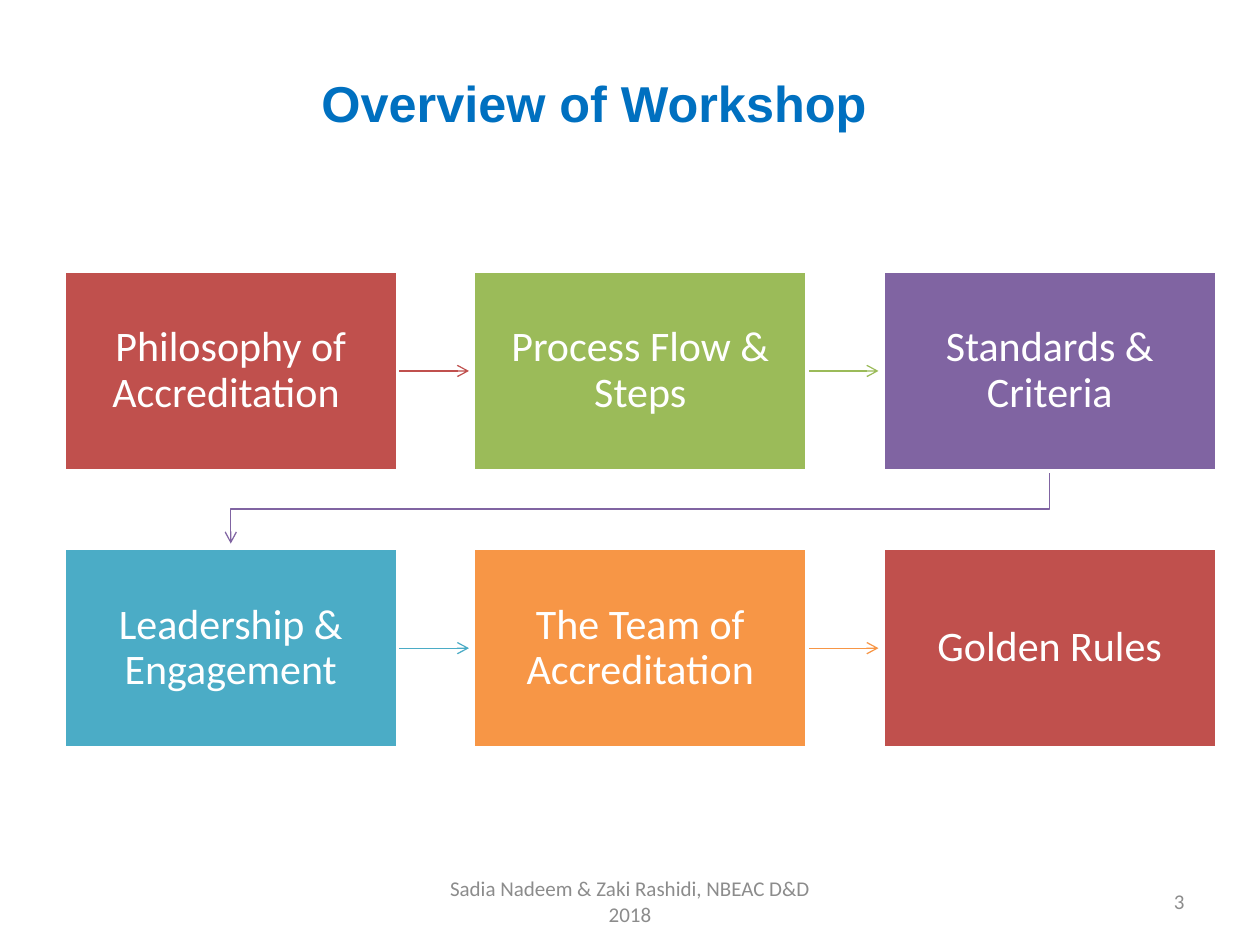
from lxml import etree
from pptx import Presentation
from pptx.dml.color import RGBColor
from pptx.enum import shapes, text
from pptx.oxml import ns
from pptx.util import Pt

WHITE = RGBColor(0xFF, 0xFF, 0xFF)
BLUE = RGBColor(0x00, 0x70, 0xC0)
GRAY = RGBColor(0x8C, 0x8C, 0x8C)
RED = RGBColor(0xC0, 0x50, 0x4D)
GREEN = RGBColor(0x9B, 0xBB, 0x59)
PURPLE = RGBColor(0x80, 0x64, 0xA2)
TEAL = RGBColor(0x4B, 0xAC, 0xC6)
ORANGE = RGBColor(0xF7, 0x96, 0x46)

STEPS = [
    ("Philosophy of Accreditation ", RED),
    ("Process Flow & Steps", GREEN),
    ("Standards & Criteria", PURPLE),
    ("Leadership & Engagement", TEAL),
    ("The Team of Accreditation", ORANGE),
    ("Golden Rules", RED),
]
COLUMNS = 3
LEFT, TOP = 36.6, 154.8
WIDTH, HEIGHT = 190.6, 114.4
PITCH_X, PITCH_Y = 234, 158.4
ARROW_GAP = 2.6
TURN_DROP = 21.7


class Page:
    font = "Calibri"
    step_size = 24
    small_size = 12
    inset = 13.7

    def __init__(self, deck):
        self.slide = deck.slides.add_slide(deck.slide_layouts[5])

    def set_words(self, shape, words, size, color, align, font=None, bold=False):
        frame = shape.text_frame
        frame.text = words
        frame.word_wrap = True
        frame.vertical_anchor = text.MSO_ANCHOR.MIDDLE
        para = frame.paragraphs[0]
        para.alignment = align
        for span in para.runs:
            span.font.name = font or self.font
            span.font.size = Pt(size)
            span.font.bold = bold
            span.font.color.rgb = color
        return frame

    def title(self, words, left, top, width, height):
        box = self.slide.shapes.title
        box.left, box.top, box.width, box.height = map(Pt, (left, top, width, height))
        self.set_words(box, words, 28.8, BLUE, text.PP_ALIGN.CENTER, "Arial", True)

    def label(self, words, left, top, width, height, align):
        box = self.slide.shapes.add_textbox(*map(Pt, (left, top, width, height)))
        self.set_words(box, words, self.small_size, GRAY, align)

    def step(self, words, color, left, top):
        box = self.slide.shapes.add_shape(
            shapes.MSO_SHAPE.RECTANGLE, *map(Pt, (left, top, WIDTH, HEIGHT)))
        box.shadow.inherit = False
        box.fill.solid()
        box.fill.fore_color.rgb = color
        box.line.color.rgb = WHITE
        box.line.width = Pt(2)
        frame = self.set_words(box, words, self.step_size, WHITE, text.PP_ALIGN.CENTER)
        frame.margin_left = frame.margin_right = Pt(self.inset)
        frame.margin_top = frame.margin_bottom = Pt(self.inset)
        frame.paragraphs[0].line_spacing = 0.9
        return box

    def arrow_style(self, arrow, color, box):
        arrow.line.color.rgb = color
        arrow.line.width = Pt(0.75)
        outline = arrow._element.spPr.find(ns.qn("a:ln"))
        etree.SubElement(outline, ns.qn("a:tailEnd"), type="arrow")
        box._element.addprevious(arrow._element)

    def arrow(self, box, color):
        start = box.left + box.width
        middle = box.top + box.height // 2
        end = start + Pt(PITCH_X - WIDTH - ARROW_GAP)
        arrow = self.slide.shapes.add_connector(
            shapes.MSO_CONNECTOR.STRAIGHT, start, middle, end, middle)
        arrow.begin_connect(box, 3)
        self.arrow_style(arrow, color, box)
        etree.SubElement(arrow._element.spPr, ns.qn("a:effectLst"))

    def turn(self, box, target, color):
        start_x = box.left + box.width // 2
        end_x = target.left + target.width // 2
        start_y = box.top + box.height
        turn_y = start_y + Pt(TURN_DROP)
        builder = self.slide.shapes.build_freeform(start_x, start_y)
        builder.add_line_segments(
            [(start_x, turn_y), (end_x, turn_y), (end_x, target.top - Pt(ARROW_GAP))],
            close=False)
        arrow = builder.convert_to_shape()
        arrow.shadow.inherit = False
        arrow.fill.background()
        self.arrow_style(arrow, color, box)


def main():
    deck = Presentation()
    deck.slide_width, deck.slide_height = Pt(720), Pt(540)
    page = Page(deck)
    page.title("Overview of Workshop", 6.5, 37.4, 666, 41.8)

    boxes = []
    for index, (words, color) in enumerate(STEPS):
        row, column = divmod(index, COLUMNS)
        boxes.append(page.step(words, color, LEFT + column * PITCH_X, TOP + row * PITCH_Y))

    for index, (box, target) in enumerate(zip(boxes, boxes[1:])):
        color = STEPS[index][1]
        if (index + 1) % COLUMNS:
            page.arrow(box, color)
        else:
            page.turn(box, target, color)

    page.label("3", 516, 500.5, 168, 28.8, text.PP_ALIGN.RIGHT)
    page.label("Sadia Nadeem & Zaki Rashidi, NBEAC D&D 2018",
               246, 500.5, 228, 28.8, text.PP_ALIGN.CENTER)
    deck.save("out.pptx")


if __name__ == "__main__":
    main()
